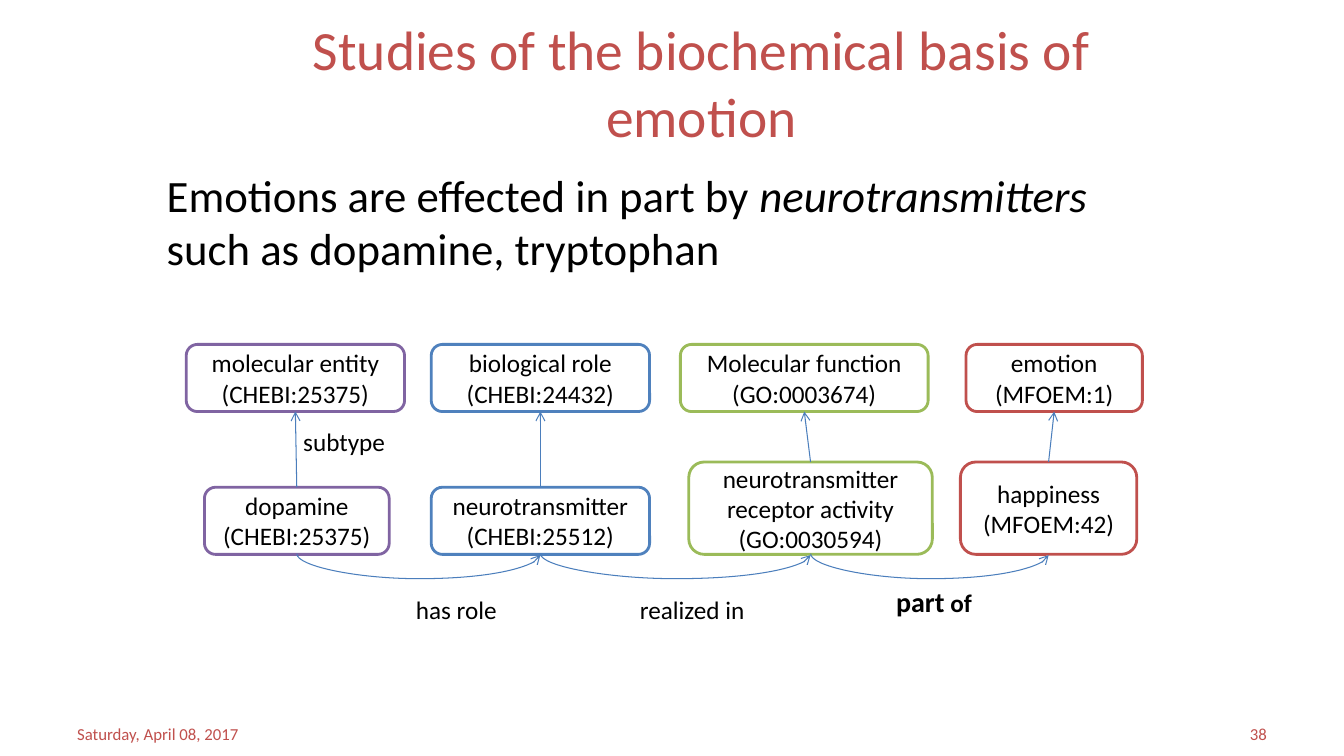
from itertools import pairwise

from lxml import etree
from pptx import Presentation
from pptx.dml import color
from pptx.enum import shapes, text
from pptx.oxml import ns
from pptx.util import Pt

RED, PURPLE, BLUE, GREEN = "C0504D", "8064A2", "4F81BD", "9BBB59"
ARROW, BLACK, WHITE = "4B7EBC", "000000", "FFFFFF"
TOP, MIDDLE = text.MSO_ANCHOR.TOP, text.MSO_ANCHOR.MIDDLE
LEFT, CENTER, RIGHT = text.PP_ALIGN.LEFT, text.PP_ALIGN.CENTER, text.PP_ALIGN.RIGHT
CURVE_DIP = 18


def rgb(value):
    return color.RGBColor.from_string(value)


def sub(parent, tag, **attrs):
    return etree.SubElement(parent, ns.qn(tag), attrs)


class Diagram:
    font = "Calibri"

    def __init__(self, s):
        self.s = s

    def fill_text(self, sp, runs, size, hue=BLACK, align=LEFT, anchor=TOP, wrap=True):
        tf = sp.text_frame
        tf.word_wrap, tf.vertical_anchor = wrap, anchor
        p = tf.paragraphs[0]
        p.alignment = align
        for words, extra in runs:
            for i, line in enumerate(words.split("\n")):
                if i:
                    p.add_line_break()
                r = p.add_run()
                r.text = line
                r.font.color.rgb = rgb(hue)
                style = {"name": self.font, "size": Pt(size)} | extra
                for key, value in style.items():
                    setattr(r.font, key, value)

    def label(self, at, runs, size, **layout):
        sp = self.s.shapes.add_textbox(*map(Pt, at))
        self.fill_text(sp, runs, size, **layout)

    def box(self, at, words, hue):
        sp = self.s.shapes.add_shape(shapes.MSO_SHAPE.ROUNDED_RECTANGLE, *map(Pt, at))
        sp.shadow.inherit = False
        sp.fill.solid()
        sp.fill.fore_color.rgb = rgb(WHITE)
        sp.line.color.rgb = rgb(hue)
        sp.line.width = Pt(2)
        self.fill_text(sp, [(words, {})], 18, align=CENTER, anchor=MIDDLE)

    def arrow(self, x1, y1, x2, y2, kind=shapes.MSO_CONNECTOR.STRAIGHT):
        cx = self.s.shapes.add_connector(kind, Pt(x1), Pt(y1), Pt(x2), Pt(y2))
        cx.line.color.rgb = rgb(ARROW)
        cx.line.width = Pt(0.75)
        spPr = cx._element.spPr
        sub(spPr.find(ns.qn("a:ln")), "a:tailEnd", type="arrow")
        sub(spPr, "a:effectLst")
        return cx

    def curve(self, x1, x2, y):
        mid, half = (x1 + x2) / 2, (x2 - x1) / 2
        cx = self.arrow(mid + 0.5, y - half, mid - 0.5, y + half,
                        shapes.MSO_CONNECTOR.CURVE)
        spPr = cx._element.spPr
        spPr.find(ns.qn("a:xfrm")).set("rot", str(270 * 60000))
        guides = spPr.find(ns.qn("a:prstGeom")).find(ns.qn("a:avLst"))
        sub(guides, "a:gd", name="adj1", fmla=f"val {CURVE_DIP * 100000}")


def main():
    prs = Presentation()
    prs.slide_width, prs.slide_height = Pt(960), Pt(540)
    s = prs.slides.add_slide(prs.slide_layouts[6])
    d = Diagram(s)

    d.label((174, 27, 654, 63), [("Studies of the biochemical basis of emotion", {})],
            39.6, hue=RED, align=CENTER, anchor=MIDDLE)
    d.label((112, 116, 728, 420),
            [("Emotions are effected in part by ", {}),
             ("neurotransmitters ", {"italic": True}),
             ("such as dopamine, tryptophan", {})], 32)
    for x, words, align in ((48, "Saturday, April 08, 2017", LEFT), (688, "38", RIGHT)):
        d.label((x, 515, 224, 19), [(words, {})], 12, hue=RED, align=align, anchor=MIDDLE)

    top, top_h, base = 246, 48, 396
    columns = [
        (PURPLE, 133, 156, "molecular entity\n(CHEBI:25375)",
         146, 132, 48, "dopamine\n(CHEBI:25375)"),
        (BLUE, 308, 156, "biological role\n(CHEBI:24432)",
         308, 156, 48, "neurotransmitter\n(CHEBI:25512)"),
        (GREEN, 486, 177, "Molecular function\n(GO:0003674)",
         492, 174, 66, "neurotransmitter\nreceptor activity\n(GO:0030594)"),
        (RED, 690, 126, "emotion\n(MFOEM:1)",
         686, 126, 66, "happiness\n(MFOEM:42)"),
    ]
    centers = []
    for hue, x, w, parent, cx, cw, ch, child in columns:
        d.box((x, top, w, top_h), parent, hue)
        d.box((cx, base - ch, cw, ch), child, hue)
        centers.append(cx + cw / 2)
        d.arrow(centers[-1], base - ch, x + w / 2, top + top_h)
    for x1, x2 in pairwise(centers):
        d.curve(x1, x2, base)

    bold = {"bold": True}
    for x, y, w, runs in (
        (209.5, 301, 73, [("subtype", {})]),
        (290, 421, 73, [("has role", {})]),
        (450, 421, 90, [("realized in", {})]),
        (633, 414, 69, [("part", bold | {"size": Pt(20)}), (" of", bold)]),
    ):
        d.label((x, y, w, 29), runs, 18, wrap=False)

    prs.save("out.pptx")


if __name__ == "__main__":
    main()
